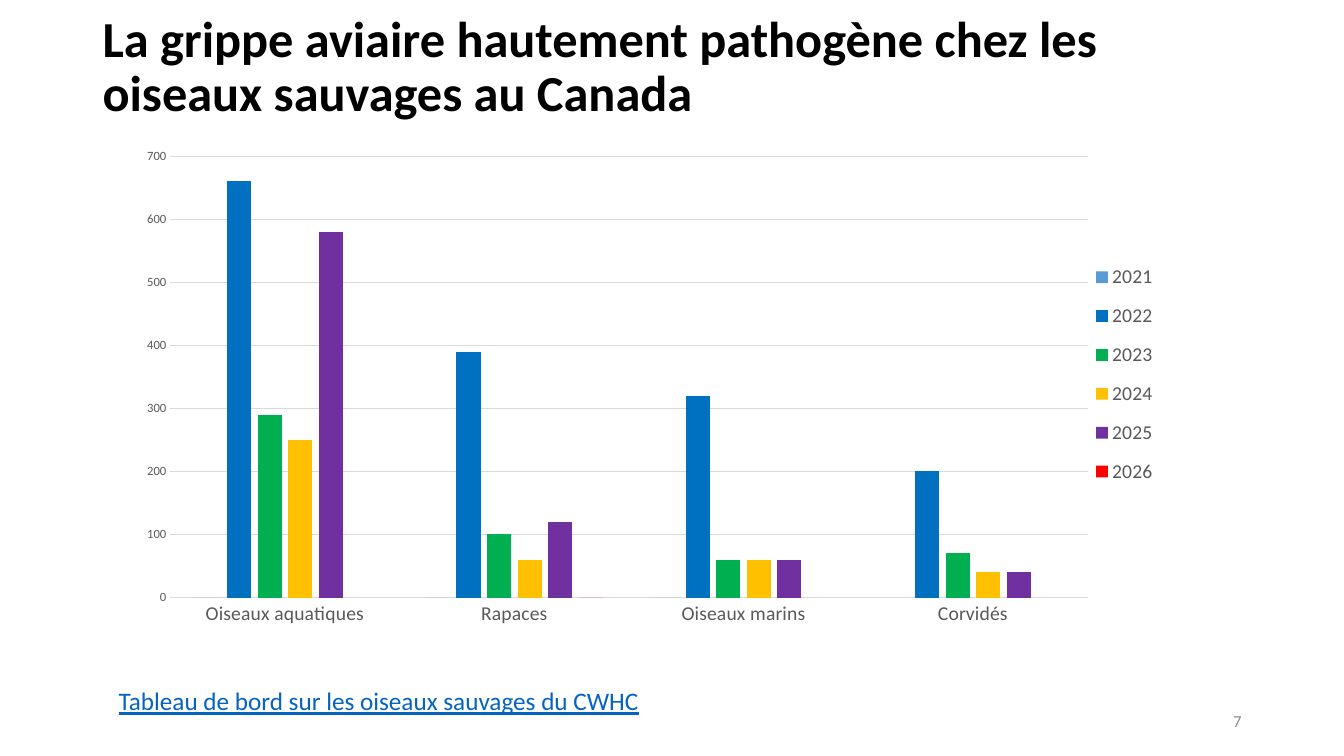
from lxml import etree
from pptx import Presentation, util as u
from pptx.chart.data import CategoryChartData
from pptx.dml.color import RGBColor
from pptx.enum import chart as ch, text
from pptx.oxml.ns import qn

BLACK = RGBColor(0x00, 0x00, 0x00)
NUMBER_GREY = RGBColor(0x8C, 0x8C, 0x8C)
LINK_BLUE = RGBColor(0x05, 0x63, 0xC1)
LABEL_GREY = RGBColor(0x59, 0x59, 0x59)
GRID_GREY = RGBColor(0xD9, 0xD9, 0xD9)
SKY = RGBColor(0x5B, 0x9B, 0xD5)
BLUE = RGBColor(0x00, 0x70, 0xC0)
GREEN = RGBColor(0x00, 0xB0, 0x50)
GOLD = RGBColor(0xFF, 0xC0, 0x00)
PURPLE = RGBColor(0x70, 0x30, 0xA0)
RED = RGBColor(0xFF, 0x00, 0x00)


def style(font, size, colour):
    font.name = "Calibri"
    font.size = u.Pt(size)
    font.color.rgb = colour


def place(area, index, **fractions):
    for old in area.findall(qn("c:layout")):
        area.remove(old)
    layout = etree.Element(qn("c:layout"))
    manual = etree.SubElement(layout, qn("c:manualLayout"))
    if area.tag == qn("c:plotArea"):
        etree.SubElement(manual, qn("c:layoutTarget")).set("val", "inner")
    for mode in ("xMode", "yMode"):
        etree.SubElement(manual, qn(f"c:{mode}")).set("val", "edge")
    for name, fraction in fractions.items():
        etree.SubElement(manual, qn(f"c:{name}")).set("val", str(fraction))
    area.insert(index, layout)


prs = Presentation()
prs.slide_width = u.Cm(33.87)
prs.slide_height = u.Cm(19.05)
slide = prs.slides.add_slide(prs.slide_layouts[5])

heading = slide.shapes.title
heading.left, heading.top = u.Cm(2.33), u.Cm(0.38)
heading.width, heading.height = u.Cm(29.21), u.Cm(2.67)
heading.text_frame.auto_size = text.MSO_AUTO_SIZE.NONE
heading.text_frame.vertical_anchor = text.MSO_ANCHOR.MIDDLE
heading_line = heading.text_frame.paragraphs[0]
heading_line.alignment = text.PP_ALIGN.LEFT
heading_line.line_spacing = 0.9
heading_words = heading_line.add_run()
heading_words.text = "La grippe aviaire hautement pathogène chez les oiseaux sauvages au Canada"
style(heading_words.font, 36, BLACK)
heading_words.font.bold = True

cases_by_year = [
    ("2021", (0, 0, 0, None), SKY),
    ("2022", (660, 390, 320, 200), BLUE),
    ("2023", (290, 100, 60, 70), GREEN),
    ("2024", (250, 60, 60, 40), GOLD),
    ("2025", (580, 120, 60, 40), PURPLE),
    ("2026", (None, 0, None, None), RED),
]
cases = CategoryChartData()
cases.categories = ["Oiseaux aquatiques", "Rapaces", "Oiseaux marins", "Corvidés"]
for year, counts, colour in cases_by_year:
    cases.add_series(year, counts)

flu_chart = slide.shapes.add_chart(
    ch.XL_CHART_TYPE.COLUMN_CLUSTERED,
    u.Cm(3.23), u.Cm(3.56), u.Cm(26.57), u.Cm(12.5), cases,
).chart
flu_chart.has_title = False
style(flu_chart.font, 10, BLACK)

bars = flu_chart.plots[0]
bars.gap_width = 219
bars.overlap = -27
bars.vary_by_categories = False
for series, (year, counts, colour) in zip(bars.series, cases_by_year):
    series.invert_if_negative = False
    series.format.fill.solid()
    series.format.fill.fore_color.rgb = colour

bird_groups = flu_chart.category_axis
case_counts = flu_chart.value_axis
for axis, size in ((bird_groups, 14), (case_counts, 9)):
    axis.major_tick_mark = ch.XL_TICK_MARK.NONE
    axis.minor_tick_mark = ch.XL_TICK_MARK.NONE
    style(axis.tick_labels.font, size, LABEL_GREY)
case_counts.minimum_scale = 0
case_counts.maximum_scale = 700
case_counts.major_unit = 100
case_counts.format.line.fill.background()
case_counts.has_major_gridlines = True
for rule in (bird_groups.format.line, case_counts.major_gridlines.format.line):
    rule.color.rgb = GRID_GREY
    rule.width = u.Pt(0.75)

flu_chart.has_legend = True
years = flu_chart.legend
years.position = ch.XL_LEGEND_POSITION.RIGHT
years.include_in_layout = False
style(years.font, 14, LABEL_GREY)

chart_root = flu_chart.element
place(chart_root.find(".//" + qn("c:plotArea")), 0, x=0.04, y=0.03, w=0.87, h=0.89)
place(chart_root.find(".//" + qn("c:legend")), 1, x=0.91, y=0.22, w=0.07, h=0.5)

dashboard = slide.shapes.add_textbox(u.Cm(2.74), u.Cm(17.15), u.Cm(25.96), u.Cm(1.03))
dashboard.text_frame.word_wrap = True
dashboard_words = dashboard.text_frame.paragraphs[0].add_run()
dashboard_words.text = "Tableau de bord sur les oiseaux sauvages du CWHC"
style(dashboard_words.font, 18, LINK_BLUE)
dashboard_words.font.underline = True

page = slide.shapes.add_textbox(u.Cm(23.92), u.Cm(17.66), u.Cm(7.62), u.Cm(1.01))
page.text_frame.word_wrap = True
page.text_frame.vertical_anchor = text.MSO_ANCHOR.MIDDLE
page_line = page.text_frame.paragraphs[0]
page_line.alignment = text.PP_ALIGN.RIGHT
page_number = page_line.add_run()
page_number.text = "7"
style(page_number.font, 12, NUMBER_GREY)

prs.save("out.pptx")
